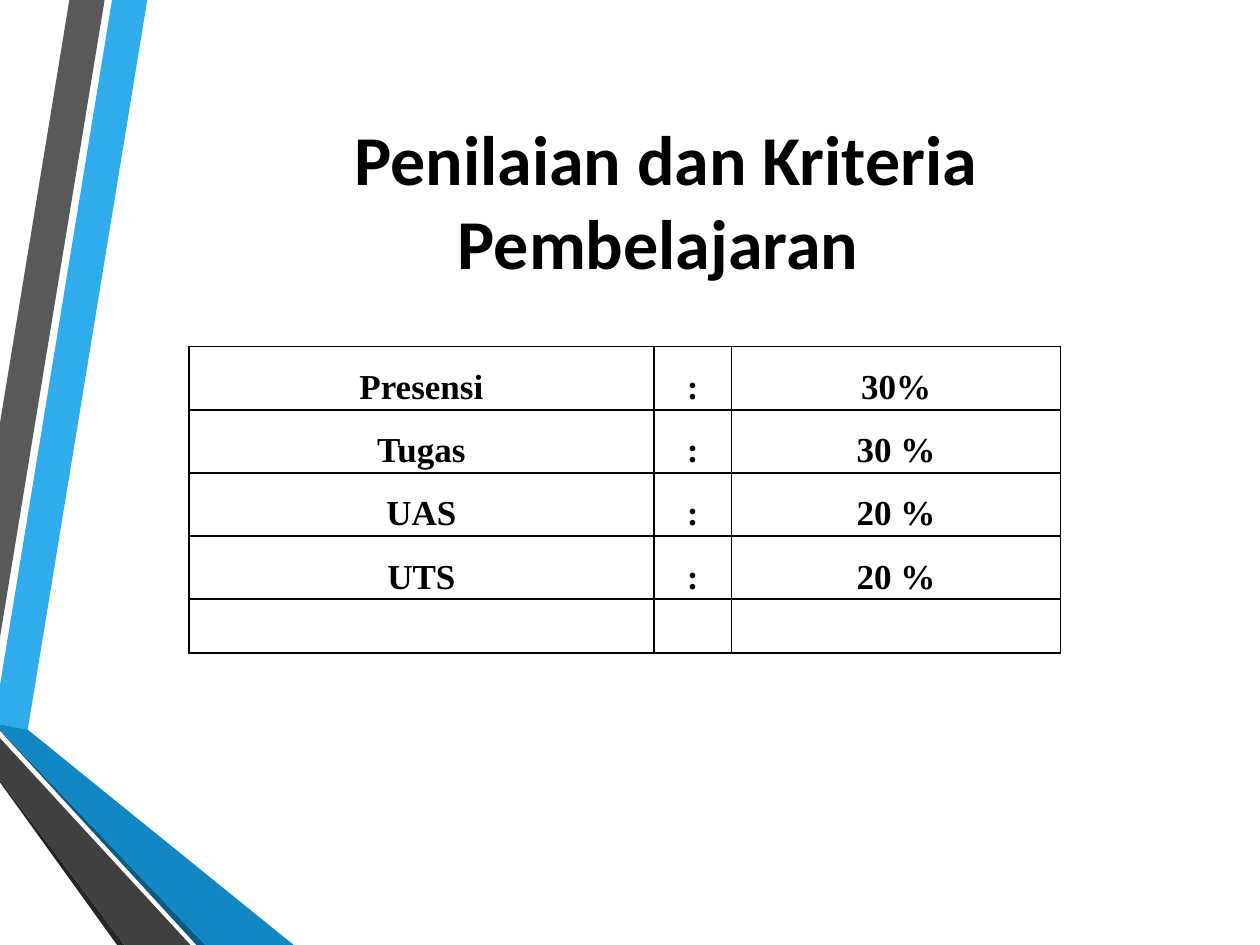
"""Build the slide with the assessment weights table and ribbon decoration."""
from dataclasses import dataclass

import lxml.etree
import pptx
import pptx.dml.color
import pptx.enum.text
import pptx.oxml.ns
import pptx.util

Cm = pptx.util.Cm


@dataclass(frozen=True)
class Theme:
    text: str = "000000"
    blue_light: str = "30ACEC"
    blue: str = "1287C3"
    blue_dark: str = "0C5A82"
    gray_light: str = "595959"
    gray: str = "404040"
    gray_dark: str = "262626"
    title_font: str = "Calibri"
    table_font: str = "Times New Roman"
    title_size: int = 40
    table_size: int = 20
    border_width: int = 1


theme = Theme()


def format_paragraph(paragraph, font_name, size):
    paragraph.alignment = pptx.enum.text.PP_ALIGN.CENTER
    for run in paragraph.runs:
        run.font.name = font_name
        run.font.size = pptx.util.Pt(size)
        run.font.bold = True
        run.font.color.rgb = pptx.dml.color.RGBColor.from_string(theme.text)


def add_borders(cell):
    properties = cell._tc.get_or_add_tcPr()
    for side in ("a:lnL", "a:lnR", "a:lnT", "a:lnB"):
        line = lxml.etree.SubElement(properties, pptx.oxml.ns.qn(side))
        line.set("w", str(pptx.util.Pt(theme.border_width)))
        fill = lxml.etree.SubElement(line, pptx.oxml.ns.qn("a:solidFill"))
        color = lxml.etree.SubElement(fill, pptx.oxml.ns.qn("a:srgbClr"))
        color.set("val", theme.text)


presentation = pptx.Presentation()
presentation.slide_width = Cm(25.4)
presentation.slide_height = Cm(19.05)
slide = presentation.slides.add_slide(presentation.slide_layouts[6])

bottom = 19.05
ribbons = [
    (theme.blue_light, [(0, 13.82), (0, 14.6), (0.56, 14.71), (2.97, 0), (2.26, 0)]),
    (theme.gray_light, [(2.11, 0), (1.4, 0), (0, 8.53), (0, 12.85)]),
    (theme.gray_dark, [(0, 15.72), (0, 15.77), (2.36, bottom), (2.51, bottom)]),
    (theme.blue_dark, [(0, 14.71), (0, 14.73), (3.96, bottom), (4.14, bottom)]),
    (theme.blue, [(0, 14.71), (4.14, bottom), (5.92, bottom), (0.56, 14.71), (0, 14.6)]),
    (theme.gray, [(0, 15.72), (2.51, bottom), (3.84, bottom), (0, 14.88)]),
]
for color, corners in ribbons:
    points = [(Cm(x), Cm(y)) for x, y in corners]
    builder = slide.shapes.build_freeform(*points[0])
    builder.add_line_segments(points[1:], close=True)
    shape = builder.convert_to_shape()
    shape.shadow.inherit = False
    shape.fill.solid()
    shape.fill.fore_color.rgb = pptx.dml.color.RGBColor.from_string(color)
    shape.line.fill.background()

title = slide.shapes.add_textbox(Cm(2.72), Cm(1.27), Cm(21.41), Cm(5.5))
title_frame = title.text_frame
title_frame.word_wrap = True
title_frame.margin_left = title_frame.margin_right = Cm(0.5)
title_frame.vertical_anchor = pptx.enum.text.MSO_ANCHOR.MIDDLE
title_frame.text = "Penilaian dan Kriteria Pembelajaran "
format_paragraph(title_frame.paragraphs[0], theme.title_font, theme.title_size)

weights = [
    ("Presensi", ":", "30%"),
    ("Tugas", ":", "30 %"),
    ("UAS", ":", "20 %"),
    ("UTS", ":", "20 %"),
    ("", "", ""),
]
column_widths = [9.37, 1.57, 6.63]
row_heights = [1.17] * 4 + [1.09]
table = slide.shapes.add_table(
    len(weights), len(column_widths), Cm(3.81), Cm(6.99),
    Cm(sum(column_widths)), Cm(sum(row_heights)),
).table
table.first_row = False
table.horz_banding = False
for column, width in zip(table.columns, column_widths):
    column.width = Cm(width)
for row, height, texts in zip(table.rows, row_heights, weights):
    row.height = Cm(height)
    for cell, text in zip(row.cells, texts):
        add_borders(cell)
        cell.fill.background()
        cell.vertical_anchor = pptx.enum.text.MSO_ANCHOR.MIDDLE
        cell.margin_left = cell.margin_right = Cm(0.18)
        cell.margin_top = cell.margin_bottom = Cm(0)
        if text:
            cell.text_frame.text = text
            paragraph = cell.text_frame.paragraphs[0]
            paragraph.line_spacing = 1.5
            format_paragraph(paragraph, theme.table_font, theme.table_size)

presentation.save("out.pptx")
